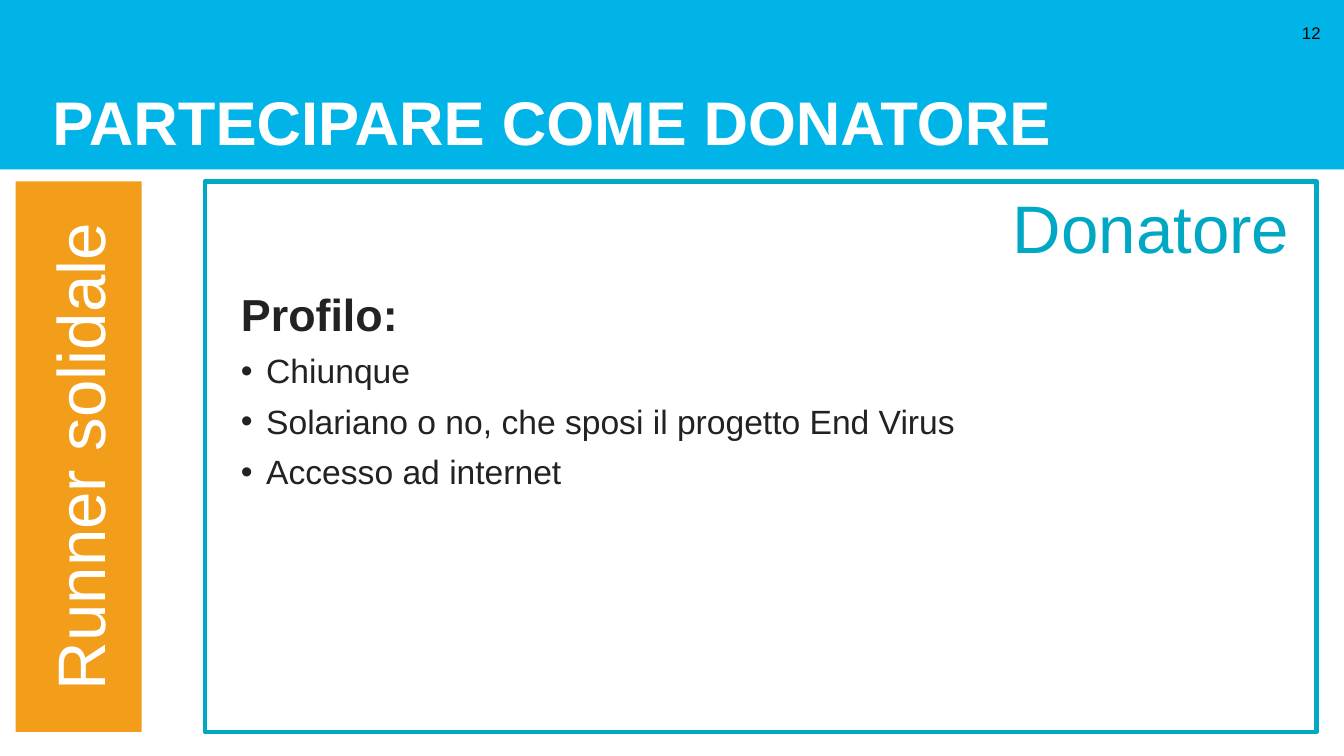
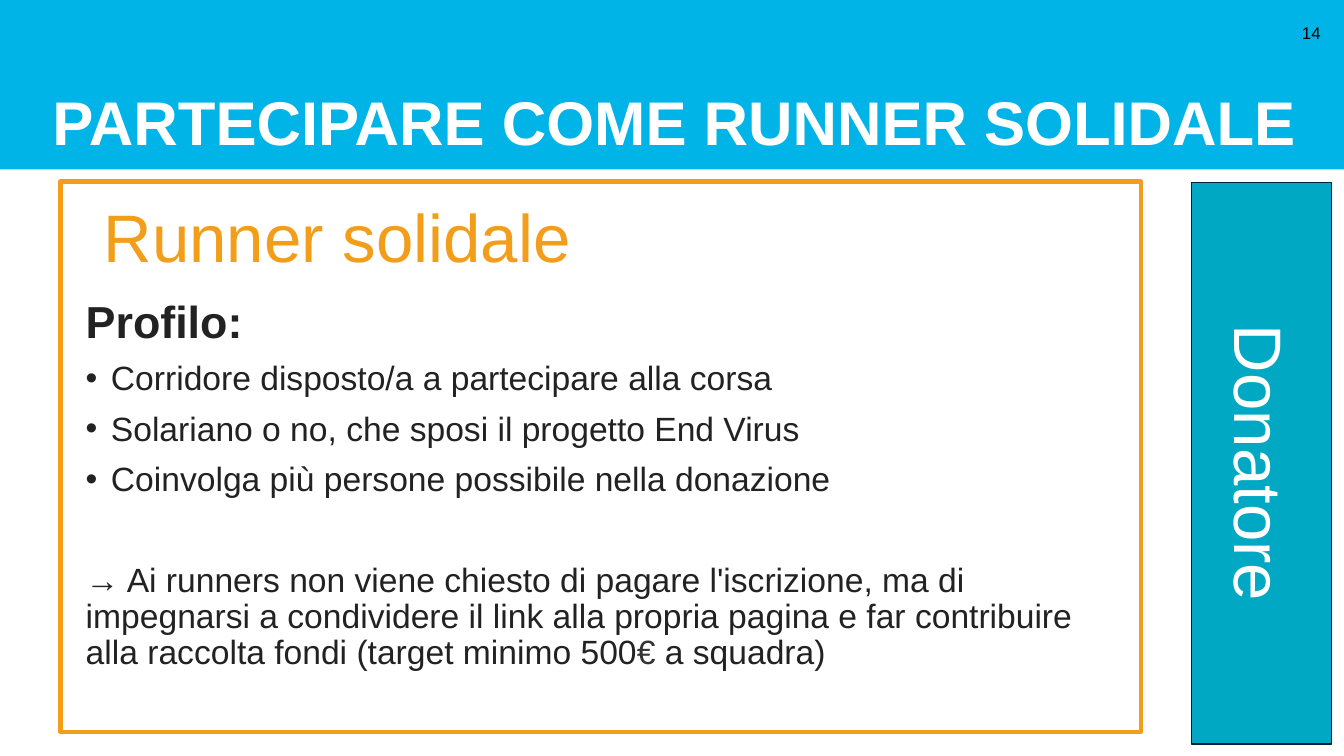
"""Builds two profile slides, for donors and for charity runners."""
from dataclasses import dataclass

from lxml import etree
from pptx import Presentation
from pptx.dml.color import RGBColor
from pptx.enum.shapes import MSO_SHAPE
from pptx.enum.text import MSO_ANCHOR, MSO_AUTO_SIZE, PP_ALIGN
from pptx.oxml.ns import qn
from pptx.shapes.autoshape import Shape
from pptx.slide import Slide
from pptx.text.text import TextFrame
from pptx.util import Inches, Pt

RECTANGLE = MSO_SHAPE.RECTANGLE
LEFT, CENTER, RIGHT = PP_ALIGN.LEFT, PP_ALIGN.CENTER, PP_ALIGN.RIGHT
MIDDLE, BOTTOM = MSO_ANCHOR.MIDDLE, MSO_ANCHOR.BOTTOM
NO_AUTOFIT = MSO_AUTO_SIZE.NONE

SKY = RGBColor(0x01, 0xB4, 0xE7)
TEAL = RGBColor(0x00, 0xA8, 0xC4)
ORANGE = RGBColor(0xF2, 0x9E, 0x1A)
NAVY = RGBColor(0x0A, 0x1E, 0x3F)
INK = RGBColor(0x22, 0x22, 0x22)
GREY = RGBColor(0x33, 0x33, 0x33)
BLACK = RGBColor(0x00, 0x00, 0x00)
WHITE = RGBColor(0xFF, 0xFF, 0xFF)

FONT = "Arial"
SLIDE_WIDTH, SLIDE_HEIGHT = Inches(13.33), Inches(7.5)
LINE_SPACING = 0.9
BULLET_INDENT = Inches(0.25)


@dataclass(frozen=True)
class Area:
    """A rectangle in percent of the slide's width and height."""
    left: float
    top: float
    width: float
    height: float

    def box(self) -> tuple[int, int, int, int]:
        """Return left, top, width and height as lengths."""
        return (int(SLIDE_WIDTH * self.left / 100), int(SLIDE_HEIGHT * self.top / 100),
                int(SLIDE_WIDTH * self.width / 100), int(SLIDE_HEIGHT * self.height / 100))


@dataclass(frozen=True)
class Span:
    """A piece of text in one colour."""
    text: str
    color: RGBColor = INK


@dataclass(frozen=True)
class Line:
    """A paragraph of the profile."""
    spans: tuple[Span, ...]
    size: int = 24
    bold: bool = False
    bullet: bool = False
    before: int = 10


@dataclass(frozen=True)
class Tab:
    """A rotated side label, placed where it shows."""
    text: str
    area: Area
    rotation: int
    fill: RGBColor
    outline: RGBColor | None = None


@dataclass(frozen=True)
class Profile:
    """The content of one slide."""
    number: str
    title: str
    heading: str
    heading_area: Area
    alignment: PP_ALIGN
    accent: RGBColor
    frame_area: Area
    body_area: Area
    lines: tuple[Line, ...]
    tab: Tab


BAND_AREA = Area(0, 0, 100, 22.4)
TITLE_AREA = Area(3.15, 0, 94.35, 22.4)
NUMBER_AREA = Area(95.55, 1.73, 3.45, 5.33)

PROFILE_LINE = Line((Span("Profilo:"),), size=32, bold=True)
MEMBER_LINE = Line((Span("Solariano o no, che sposi il progetto End Virus"),), bullet=True)

PROFILES = (
    Profile(
        "12", "PARTECIPARE COME DONATORE", "Donatore", Area(43.5, 24, 53.18, 12.13),
        RIGHT, TEAL, Area(15.23, 24, 82.73, 72.8), Area(17.18, 38, 78.75, 58.8),
        (PROFILE_LINE,
         Line((Span("Chiunque"),), bullet=True),
         MEMBER_LINE,
         Line((Span("Accesso ad internet"),), bullet=True)),
        Tab("Runner solidale", Area(1.16, 24, 9.38, 72.8), 270, ORANGE)),
    Profile(
        "14", "PARTECIPARE COME RUNNER SOLIDALE", "Runner solidale",
        Area(6.98, 25.2, 69.9, 12.13),
        LEFT, ORANGE, Area(4.5, 24, 80.4, 72.8), Area(5.63, 38.93, 77.48, 58.8),
        (PROFILE_LINE,
         Line((Span("Corridore disposto/a a partecipare alla corsa"),), bullet=True),
         MEMBER_LINE,
         Line((Span("Coinvolga più persone possibile nella donazione"),), bullet=True),
         Line((Span("→ Ai runners non viene chiesto di pagare l'iscrizione, ma di "
                    "impegnarsi a condividere il link alla propria pagina e far "
                    "contribuire alla raccolta fondi (target minimo 500"),
               Span("€ ", GREY), Span("a squadra)")), before=46)),
        Tab("Donatore", Area(88.65, 24.13, 10.43, 74.27), 90, TEAL, NAVY)),
)


def place(shape: Shape, area: Area) -> None:
    """Move and size a shape to an area."""
    shape.left, shape.top, shape.width, shape.height = area.box()


def write(frame: TextFrame, text: str, size: int, color: RGBColor,
          alignment: PP_ALIGN, bold: bool = False) -> None:
    """Fill a text frame with one formatted paragraph."""
    frame.text = text
    frame.word_wrap = True
    para = frame.paragraphs[0]
    para.alignment = alignment
    font = para.runs[0].font
    font.name, font.size, font.bold = FONT, Pt(size), bold
    font.color.rgb = color


def add_rectangle(page: Slide, area: Area, fill: RGBColor | None = None,
                  outline: RGBColor | None = None, weight: float = 1) -> Shape:
    """Add a rectangle with an optional fill and outline."""
    shape = page.shapes.add_shape(RECTANGLE, *area.box())
    shape.shadow.inherit = False
    if fill is None:
        shape.fill.background()
    else:
        shape.fill.solid()
        shape.fill.fore_color.rgb = fill
    if outline is None:
        shape.line.fill.background()
    else:
        shape.line.color.rgb = outline
        shape.line.width = Pt(weight)
    return shape


def add_label(page: Slide, area: Area, text: str, size: int, color: RGBColor,
              alignment: PP_ALIGN) -> TextFrame:
    """Add a text box with one paragraph."""
    frame = page.shapes.add_textbox(*area.box()).text_frame
    write(frame, text, size, color, alignment)
    return frame


def add_band(page: Slide) -> None:
    """Add the title band behind everything else."""
    band = add_rectangle(page, BAND_AREA, SKY)
    page.shapes.element.insert(2, band.element)


def fill_title(page: Slide, text: str) -> None:
    """Place and format the title."""
    title = page.shapes.title
    place(title, TITLE_AREA)
    frame = title.text_frame
    frame.auto_size = NO_AUTOFIT
    frame.vertical_anchor = BOTTOM
    frame.margin_left = frame.margin_right = frame.margin_bottom = Inches(0.1)
    frame.margin_top = 0
    write(frame, text, 44, WHITE, LEFT, bold=True)
    frame.paragraphs[0].line_spacing = LINE_SPACING


def fill_body(page: Slide, area: Area, lines: tuple[Line, ...]) -> None:
    """Write the profile list into the body placeholder."""
    body = page.placeholders[1]
    place(body, area)
    frame = body.text_frame
    frame.auto_size = NO_AUTOFIT
    for index, line in enumerate(lines):
        para = frame.add_paragraph() if index else frame.paragraphs[0]
        para.line_spacing = LINE_SPACING
        para.space_before = Pt(line.before)
        indent = BULLET_INDENT if line.bullet else 0
        properties = para._p.get_or_add_pPr()
        properties.set("marL", str(indent))
        properties.set("indent", str(-indent))
        if line.bullet:
            etree.SubElement(properties, qn("a:buChar")).set("char", "•")
        else:
            etree.SubElement(properties, qn("a:buNone"))
        for span in line.spans:
            run = para.add_run()
            run.text = span.text
            run.font.name, run.font.size, run.font.bold = FONT, Pt(line.size), line.bold
            run.font.color.rgb = span.color


def add_tab(page: Slide, tab: Tab) -> None:
    """Add a side label, turned around its centre."""
    shape = add_rectangle(page, tab.area, tab.fill, tab.outline)
    left, top, width, height = tab.area.box()
    shape.left, shape.top = left + (width - height) // 2, top + (height - width) // 2
    shape.width, shape.height = height, width
    shape.rotation = tab.rotation
    shape.text_frame.vertical_anchor = MIDDLE
    write(shape.text_frame, tab.text, 48, WHITE, CENTER)


def build_profile(page: Slide, profile: Profile) -> None:
    """Draw one profile slide."""
    add_band(page)
    fill_title(page, profile.title)
    fill_body(page, profile.body_area, profile.lines)
    number = add_label(page, NUMBER_AREA, profile.number, 12, BLACK, RIGHT)
    number.vertical_anchor = MIDDLE
    add_rectangle(page, profile.frame_area, outline=profile.accent, weight=3)
    add_label(page, profile.heading_area, profile.heading, 48, profile.accent,
              profile.alignment)
    add_tab(page, profile.tab)


def main() -> None:
    """Build and save the deck."""
    deck = Presentation()
    deck.slide_width, deck.slide_height = SLIDE_WIDTH, SLIDE_HEIGHT
    for profile in PROFILES:
        build_profile(deck.slides.add_slide(deck.slide_layouts[1]), profile)
    deck.save("out.pptx")


if __name__ == "__main__":
    main()
